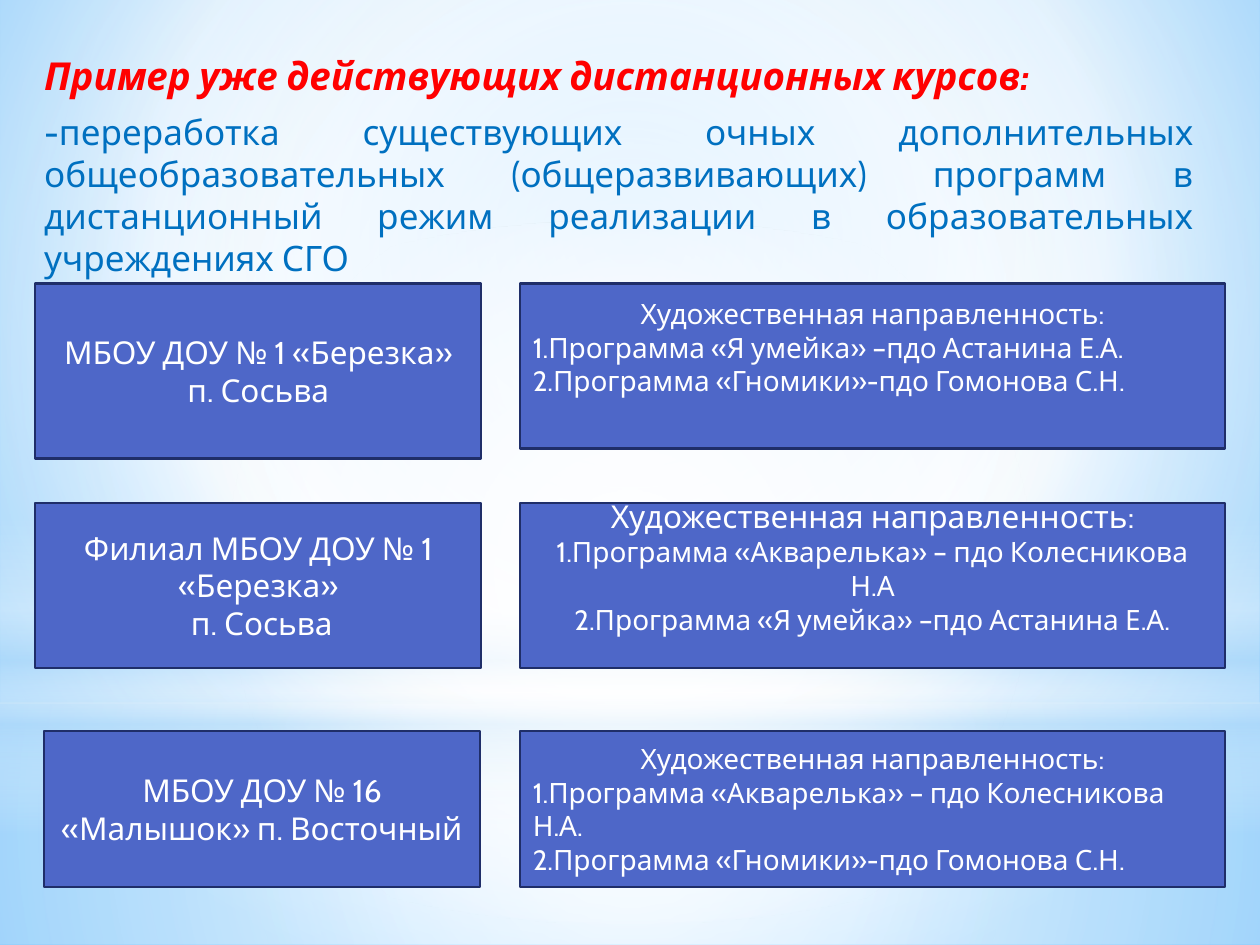
import dataclasses
import typing

import lxml.etree
import pptx
import pptx.dml.color
import pptx.enum.shapes
import pptx.enum.text
import pptx.oxml
import pptx.oxml.ns
import pptx.util

FONT = "Cabin"
WHITE = "FFFFFF"
SKY = "B4DCFA"
CENTER = pptx.enum.text.PP_ALIGN.CENTER
LEFT = pptx.enum.text.PP_ALIGN.LEFT
JUSTIFY = pptx.enum.text.PP_ALIGN.JUSTIFY
RECTANGLE = pptx.enum.shapes.MSO_SHAPE.RECTANGLE
OVAL = pptx.enum.shapes.MSO_SHAPE.OVAL


class Area(typing.NamedTuple):
    """Percentages of the slide's width and height."""
    left: float
    top: float
    width: float
    height: float


class Stop(typing.NamedTuple):
    position: int
    color: str
    opacity: int = 100


class Line(typing.NamedTuple):
    text: str
    size: int = 18
    alignment: pptx.enum.text.PP_ALIGN = CENTER
    color: str = WHITE
    emphasis: bool = False


@dataclasses.dataclass
class Glow:
    area: Area
    stops: list[Stop]
    preset: pptx.enum.shapes.MSO_SHAPE = RECTANGLE
    focus: tuple[int, ...] | None = (50, 50, 50, 50)


@dataclasses.dataclass
class Card:
    area: Area
    lines: list[Line]
    bottom_inset: float = 0.05


BACKDROP = [Stop(0, "9ED5FF"), Stop(60, WHITE), Stop(100, "5BB9FF")]
HORIZON = 74.4
GLOWS = [
    Glow(Area(0, HORIZON, 100, 100 - HORIZON),
         [Stop(0, WHITE, 91), Stop(37, WHITE, 76), Stop(100, SKY, 79)]),
    Glow(Area(0, 0, 100, HORIZON),
         [Stop(0, WHITE, 89), Stop(48, WHITE, 62), Stop(100, SKY, 79)]),
    Glow(Area(0, 54.93, 100, 33.33),
         [Stop(0, WHITE, 0), Stop(29, WHITE, 30), Stop(45, SKY, 40),
          Stop(55, WHITE, 26), Stop(65, SKY, 60), Stop(100, WHITE, 0)], focus=None),
    Glow(Area(0, 23.33, 100, HORIZON), [Stop(0, WHITE), Stop(56, WHITE, 0)], OVAL),
]

INTRODUCTION = [
    Line("Пример уже действующих дистанционных курсов:", 22, JUSTIFY, "FF0000", True),
    Line("-переработка существующих очных дополнительных общеобразовательных "
         "(общеразвивающих) программ в дистанционный режим реализации "
         "в образовательных учреждениях СГО", 20, JUSTIFY, "0070C0"),
]

ROW_TOPS = (30, 53.2, 77.33)
ROW_HEIGHTS = (17.47, 17.47, 16.53)
SCHOOL_LEFT, SCHOOL_WIDTH = 2.8, 35.4
DIRECTION = "Художественная направленность:"
SCHOOLS = [
    Card(Area(SCHOOL_LEFT, ROW_TOPS[0], SCHOOL_WIDTH, 18.53),
         [Line("МБОУ ДОУ № 1 «Березка» п. Сосьва")]),
    Card(Area(SCHOOL_LEFT, ROW_TOPS[1], SCHOOL_WIDTH, ROW_HEIGHTS[1]),
         [Line("Филиал МБОУ ДОУ № 1 «Березка»"), Line(" п. Сосьва")]),
    Card(Area(3.5, ROW_TOPS[2], 34.6, ROW_HEIGHTS[2]),
         [Line("МБОУ ДОУ № 16 «Малышок» п. Восточный")]),
]
PROGRAM_LINES = [
    [Line(DIRECTION, 16),
     Line("1.Программа «Я умейка» –пдо Астанина Е.А.", 16, LEFT),
     Line("2.Программа «Гномики»-пдо Гомонова С.Н.", 16, LEFT)],
    [Line(DIRECTION),
     Line("1.Программа «Акварелька» – пдо Колесникова Н.А", 16),
     Line("2.Программа «Я умейка» –пдо Астанина Е.А.", 16)],
    [Line(DIRECTION, 16),
     Line("1.Программа «Акварелька» – пдо Колесникова Н.А.", 16, LEFT),
     Line("2.Программа «Гномики»-пдо Гомонова С.Н.", 16, LEFT)],
]
PROGRAMS = [
    Card(Area(41.3, top, 55.9, height), lines, inset)
    for top, height, lines, inset in zip(
        ROW_TOPS, ROW_HEIGHTS, PROGRAM_LINES, (0.35, 0.35, 0.05))
]

presentation = pptx.Presentation()
presentation.slide_width = pptx.util.Inches(10)
presentation.slide_height = pptx.util.Inches(7.5)


def rgb(color: str) -> pptx.dml.color.RGBColor:
    return pptx.dml.color.RGBColor.from_string(color)


def place(area: Area) -> tuple[int, ...]:
    sides = (presentation.slide_width, presentation.slide_height) * 2
    return tuple(round(share * side / 100) for share, side in zip(area, sides))


def set_gradient(element, stops: list[Stop], focus: tuple[int, ...] | None) -> None:
    colors = "".join(
        f'<a:gs pos="{stop.position * 1000}"><a:srgbClr val="{stop.color}">'
        f'<a:alpha val="{stop.opacity * 1000}"/></a:srgbClr></a:gs>' for stop in stops)
    if focus:
        edges = " ".join(f'{side}="{share * 1000}"' for side, share in zip("ltrb", focus))
        shading = f'<a:path path="circle"><a:fillToRect {edges}/></a:path>'
    else:
        shading = '<a:lin ang="5400000" scaled="0"/>'
    gradient = pptx.oxml.parse_xml(
        f'<a:gradFill {pptx.oxml.ns.nsdecls("a")} rotWithShape="1">'
        f'<a:gsLst>{colors}</a:gsLst>{shading}</a:gradFill>')
    empty_fill = element.find(f'.//{pptx.oxml.ns.qn("a:noFill")}')
    empty_fill.getparent().replace(empty_fill, gradient)


def write_lines(text_frame, lines: list[Line]) -> None:
    text_frame.word_wrap = True
    for index, line in enumerate(lines):
        paragraph = text_frame.add_paragraph() if index else text_frame.paragraphs[0]
        paragraph.text = line.text
        paragraph.alignment = line.alignment
        font = paragraph.font
        font.name, font.size = FONT, pptx.util.Pt(line.size)
        font.bold = font.italic = line.emphasis
        font.color.rgb = rgb(line.color)


def draw_glow(slide, glow: Glow) -> None:
    shape = slide.shapes.add_shape(glow.preset, *place(glow.area))
    shape.shadow.inherit = False
    shape.fill.background()
    set_gradient(shape.element, glow.stops, glow.focus)
    shape.line.fill.background()


def draw_introduction(body) -> None:
    body.left, body.top, body.width, body.height = place(Area(2, 4.8, 93.7, 88.13))
    write_lines(body.text_frame, INTRODUCTION)
    body.text_frame.auto_size = pptx.enum.text.MSO_AUTO_SIZE.NONE
    for paragraph in body.text_frame.paragraphs:
        paragraph.space_after = pptx.util.Pt(3)
        properties = paragraph._p.get_or_add_pPr()
        properties.set("marL", str(pptx.util.Inches(0.05)))
        properties.set("indent", "0")
        lxml.etree.SubElement(properties, pptx.oxml.ns.qn("a:buNone"))
        properties.append(properties.find(pptx.oxml.ns.qn("a:defRPr")))
    body.element.getparent().append(body.element)


def draw_card(slide, card: Card) -> None:
    shape = slide.shapes.add_shape(RECTANGLE, *place(card.area))
    shape.shadow.inherit = False
    shape.fill.solid()
    shape.fill.fore_color.rgb = rgb("4E67C8")
    shape.line.color.rgb = rgb("1F2E69")
    shape.line.width = pptx.util.Pt(1.25)
    write_lines(shape.text_frame, card.lines)
    shape.text_frame.vertical_anchor = pptx.enum.text.MSO_ANCHOR.MIDDLE
    shape.text_frame.margin_bottom = pptx.util.Inches(card.bottom_inset)


def main() -> None:
    slide = presentation.slides.add_slide(presentation.slide_layouts[1])
    title, body = slide.placeholders
    title.element.getparent().remove(title.element)
    slide.background.fill.background()
    set_gradient(slide.element, BACKDROP, (20, 10, 20, 60))
    for glow in GLOWS:
        draw_glow(slide, glow)
    draw_introduction(body)
    for school, program in zip(SCHOOLS, PROGRAMS):
        draw_card(slide, school)
        draw_card(slide, program)
    presentation.save("out.pptx")


if __name__ == "__main__":
    main()
